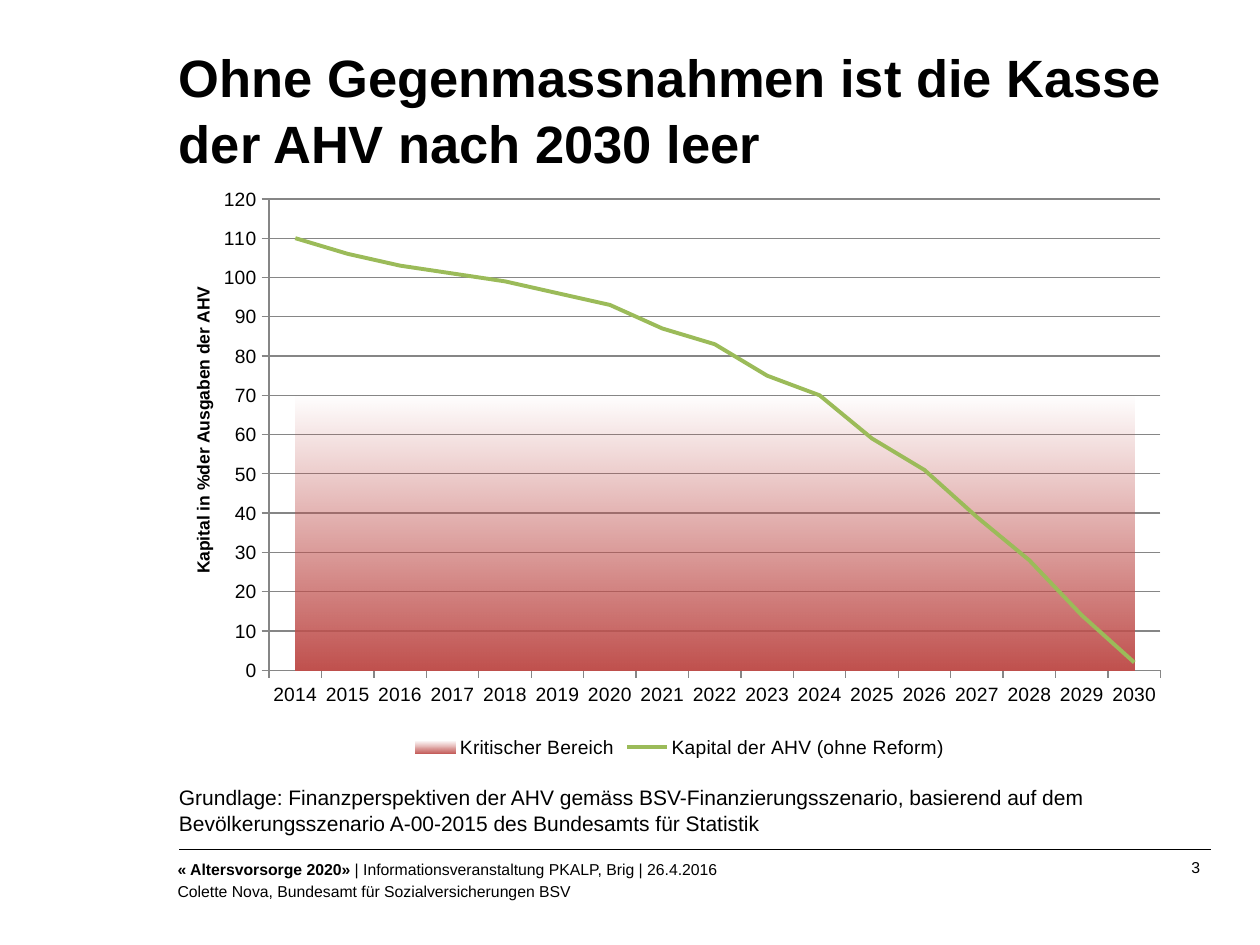
from lxml import etree
from pptx import Presentation
from pptx.chart.data import CategoryChartData
from pptx.dml.color import RGBColor
from pptx.enum.chart import (XL_CHART_TYPE as CT, XL_LEGEND_POSITION as LP,
                             XL_MARKER_STYLE as MS, XL_TICK_MARK as TM)
from pptx.enum.text import MSO_ANCHOR as MA, PP_ALIGN as AL
from pptx.oxml import parse_xml
from pptx.oxml.ns import nsdecls, qn
from pptx.util import Inches, Pt

RED, GREEN, GREY, BLACK = "C0504D", "9BBB59", "868686", "000000"
YEARS = [str(year) for year in range(2014, 2031)]
CAPITAL = [110, 106, 103, 101, 99, 96, 93, 87, 83, 75, 70, 59, 51, 39, 28, 14, 2]
LIMIT = [70] * len(YEARS)
PLOT = {"x": 0.09, "y": 0.03, "w": 0.89, "h": 0.81}


def rgb(value):
    """Turn a hex string into a colour."""
    return RGBColor.from_string(value)


def assign(target, **values):
    """Set several attributes of one object."""
    for name, value in values.items():
        setattr(target, name, value)


class Deck:
    """Hold the style and the current slide."""

    font = "Arial"

    def __init__(self):
        """Open a 10 by 7.5 inch deck with one title-only slide."""
        self.prs = Presentation()
        assign(self.prs, slide_width=Inches(10), slide_height=Inches(7.5))
        self.s = self.prs.slides.add_slide(self.prs.slide_layouts[5])

    def style(self, font, size, bold=False):
        """Apply the common font settings."""
        assign(font, name=self.font, size=Pt(size), bold=bold)
        font.color.rgb = rgb(BLACK)

    def fill_text(self, sp, paragraphs, size, insets=(0, 0), **fmt):
        """Write paragraphs of (text, bold) runs into a shape."""
        tf = sp.text_frame
        x, y = map(Inches, insets)
        assign(tf, word_wrap=True, vertical_anchor=MA.TOP, margin_left=x,
               margin_right=x, margin_top=y, margin_bottom=y)
        for i, runs in enumerate(paragraphs):
            p = tf.add_paragraph() if i else tf.paragraphs[0]
            assign(p, **{"alignment": AL.LEFT, **fmt})
            for text, bold in runs:
                r = p.add_run()
                r.text = text
                self.style(r.font, size, bold)

    def title(self, text, box, size):
        """Place and format the title placeholder."""
        sp = self.s.shapes.title
        assign(sp, **dict(zip(("left", "top", "width", "height"), map(Inches, box))))
        self.fill_text(sp, [[(text, True)]], size, line_spacing=1.05)

    def text(self, paragraphs, box, size, insets=(0, 0), rotation=0, **fmt):
        """Add a text box."""
        sp = self.s.shapes.add_textbox(*map(Inches, box))
        sp.rotation = rotation
        self.fill_text(sp, paragraphs, size, insets, **fmt)

    def line(self, start, end, width):
        """Add a straight black line without a shadow."""
        cx = self.s.shapes.add_connector(1, *map(Inches, start + end))
        cx.line.color.rgb = rgb(BLACK)
        cx.line.width = Pt(width)
        etree.SubElement(cx._element.spPr, qn("a:effectLst"))

    def chart(self, box, size):
        """Add the area chart with the capital curve on top."""
        data = CategoryChartData(number_format="#,##0")
        data.categories = YEARS
        data.add_series("Kritischer Bereich", LIMIT)
        data.add_series("Kapital der AHV (ohne Reform)", CAPITAL)
        chart = self.s.shapes.add_chart(CT.AREA, *map(Inches, box), data).chart
        assign(chart, has_title=False, has_legend=True)
        assign(chart.legend, position=LP.BOTTOM, include_in_layout=False)
        self.style(chart.font, size)
        self.combine(chart)
        self.axes(chart)
        area, curve = (plot.series[0] for plot in chart.plots)
        chart.plots[0].vary_by_categories = False
        self.fade(area)
        curve.smooth = False
        curve.marker.style = MS.NONE
        curve.format.line.color.rgb = rgb(GREEN)
        curve.format.line.width = Pt(2.25)

    def combine(self, chart):
        """Move the second series to a line plot and fix the plot layout."""
        plot_area = chart.element.find(".//" + qn("c:plotArea"))
        area = plot_area.find(qn("c:areaChart"))
        line = parse_xml(f'<c:lineChart {nsdecls("c")}><c:grouping val="standard"/>'
                         '<c:varyColors val="0"/></c:lineChart>')
        line.append(area.findall(qn("c:ser"))[1])
        etree.SubElement(line, qn("c:marker")).set("val", "1")
        for ax in area.findall(qn("c:axId")):
            etree.SubElement(line, qn("c:axId")).set("val", ax.get("val"))
        area.addnext(line)
        plot_area.find(".//" + qn("c:crossBetween")).set("val", "between")
        for old in plot_area.findall(qn("c:layout")):
            plot_area.remove(old)
        values = "".join(f'<c:{k}Mode val="edge"/>' for k in "xy")
        values += "".join(f'<c:{k} val="{v}"/>' for k, v in PLOT.items())
        plot_area.insert(0, parse_xml(
            f'<c:layout {nsdecls("c")}><c:manualLayout><c:layoutTarget val="inner"/>'
            f'{values}</c:manualLayout></c:layout>'))

    def axes(self, chart):
        """Format both axes and the gridlines."""
        cat, val = chart.category_axis, chart.value_axis
        assign(val, minimum_scale=0, maximum_scale=120, major_unit=10,
               has_major_gridlines=True)
        assign(val.tick_labels, number_format="#,##0", number_format_is_linked=False)
        cat.has_major_gridlines = False
        for axis in (cat, val):
            assign(axis, major_tick_mark=TM.OUTSIDE, minor_tick_mark=TM.NONE)
            self.style(axis.tick_labels.font, 11)
        for part in (cat, val, val.major_gridlines):
            part.format.line.color.rgb = rgb(GREY)
            part.format.line.width = Pt(0.75)

    def fade(self, series):
        """Fill a series with red that fades out upwards."""
        fill = series.format.fill
        fill.gradient()
        fill.gradient_angle = 90
        for stop in fill.gradient_stops:
            stop.color.rgb = rgb(RED)
        top = series._element.findall(".//" + qn("a:srgbClr"))[-1]
        etree.SubElement(top, qn("a:alpha")).set("val", "0")


def main():
    """Build the slide and save it."""
    deck = Deck()
    deck.text([[("3 ", False)]], (9.17, 6.81, 0.39, 0.16), 9, alignment=AL.RIGHT)
    deck.text([[("« Altersvorsorge 2020» ", True),
                ("| Informationsveranstaltung PKALP, Brig | 26.4.2016", False)],
               [("Colette Nova, Bundesamt für Sozialversicherungen BSV", False)]],
              (1.41, 6.82, 7.46, 0.47), 9, space_after=Pt(2))
    deck.line((9.61, 6.74), (1.42, 6.74), 0.75)
    deck.title("Ohne Gegenmassnahmen ist die Kasse der AHV nach 2030 leer",
               (1.42, 0.33, 8.19, 1.1), 30)
    deck.text([[("Grundlage: Finanzperspektiven der AHV gemäss BSV-Finanzierungsszenario, "
                 "basierend auf dem Bevölkerungsszenario A-00-2015 des Bundesamts für "
                 "Statistik", False)]], (1.42, 6.18, 8.19, 0.5), 12, (0, 0.05))
    deck.chart((1.42, 1.44, 7.95, 4.62), 11)
    deck.text([[("Kapital in %der Ausgaben der AHV", True)]], (0.01, 3.28, 3.2, 0.27),
              10, (0.1, 0.05), rotation=270, alignment=AL.CENTER)
    deck.prs.save("out.pptx")


if __name__ == "__main__":
    main()
